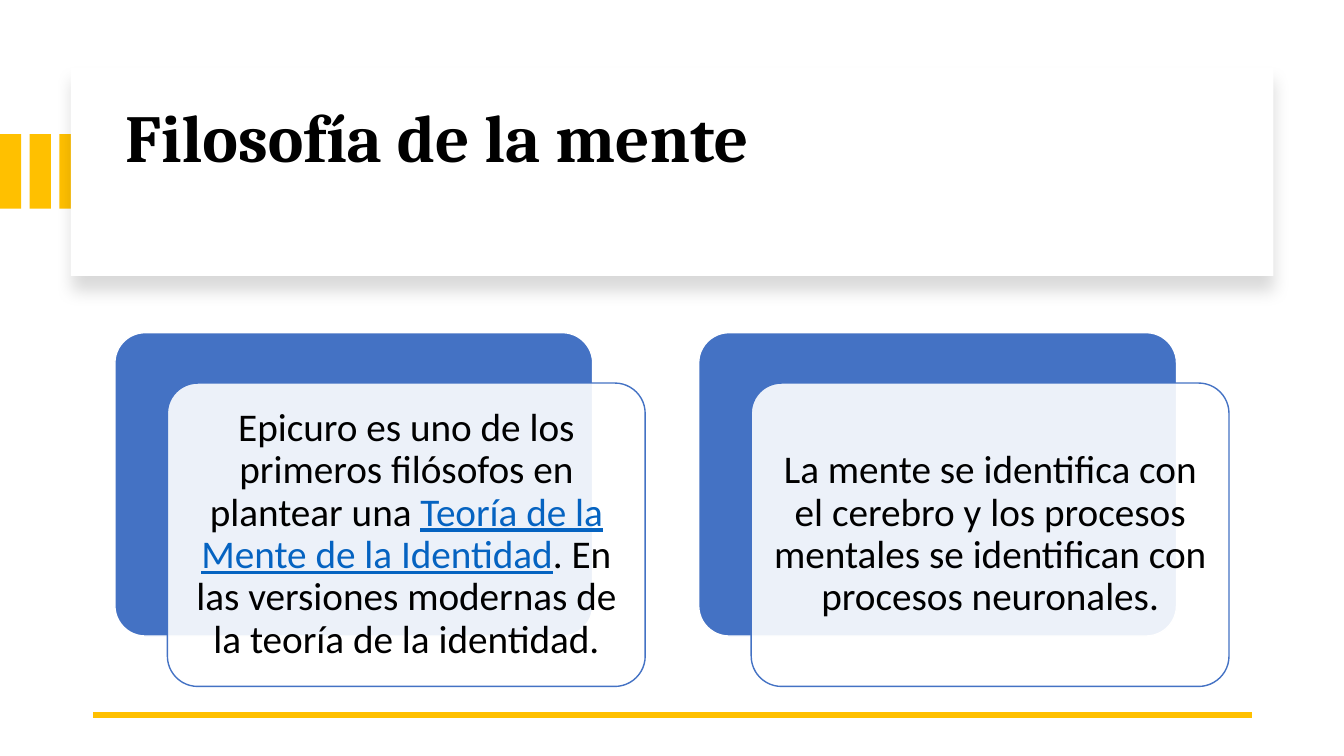
"""Build the slide on philosophy of mind with two layered cards."""
from dataclasses import dataclass
from typing import NamedTuple

from lxml import etree
from pptx import Presentation
from pptx.dml.color import RGBColor
from pptx.enum.shapes import MSO_CONNECTOR, MSO_SHAPE
from pptx.enum.text import MSO_ANCHOR, MSO_AUTO_SIZE, PP_ALIGN
from pptx.oxml.ns import qn
from pptx.shapes.autoshape import Shape
from pptx.slide import Slide
from pptx.text.text import TextFrame
from pptx.util import Pt

RECT = MSO_SHAPE.RECTANGLE
ROUND = MSO_SHAPE.ROUNDED_RECTANGLE
STRAIGHT = MSO_CONNECTOR.STRAIGHT
LEFT, CENTER = PP_ALIGN.LEFT, PP_ALIGN.CENTER
TOP, MIDDLE = MSO_ANCHOR.TOP, MSO_ANCHOR.MIDDLE


@dataclass(frozen=True)
class Theme:
    """Hold the colours, fonts and type sizes."""

    gold: str = "FFC000"
    blue: str = "4472C4"
    white: str = "FFFFFF"
    black: str = "000000"
    link: str = "0563C1"
    head: str = "Cambria"
    body: str = "Calibri"
    big: float = 48
    text: float = 28


class Box(NamedTuple):
    """Hold a frame in points."""

    left: float
    top: float
    width: float
    height: float

    def move(self, right: float, down: float) -> "Box":
        """Return the frame shifted by an offset."""
        return self._replace(left=self.left + right, top=self.top + down)

    def inset(self, gap: float) -> "Box":
        """Return the frame shrunk on every side."""
        return Box(self.left + gap, self.top + gap,
                   self.width - 2 * gap, self.height - 2 * gap)

    def pts(self) -> list[Pt]:
        """Return the frame as lengths."""
        return [Pt(part) for part in self]


class Span(NamedTuple):
    """Hold a stretch of text and whether it is marked as a link."""

    text: str
    link: bool = False


THEME = Theme()
BAR = Box(0, 95.8, 15.1, 53.3)
BAR_STEP = 21.2
BAR_COUNT = 3
PANEL = Box(50.6, 48.2, 859, 149)
TITLE = Box(82.1, 64.1, 801.4, 122.4)
CARD = Box(82.1, 237.6, 341.3, 216.7)
CARD_STEP = 417
FRONT = (37.5, 36)
TEXT_GAP = 6.4
CARDS = (
    (
        Span("Epicuro es uno de los primeros filósofos en plantear una "),
        Span("Teoría de la Mente de la Identidad", True),
        Span(". En las versiones modernas de la teoría de la identidad."),
    ),
    (
        Span("La mente se identifica con el cerebro y los procesos mentales "
             "se identifican con procesos neuronales."),
    ),
)


def write(frame: TextFrame, spans: tuple[Span, ...], *, font: str, size: float,
          bold: bool = False, align: PP_ALIGN = LEFT,
          anchor: MSO_ANCHOR = MIDDLE,
          pads: tuple[float, float] = (8.6, 8.6)) -> None:
    """Fill a text frame with formatted spans, padded at side and top."""
    side, top = pads
    frame.word_wrap = True
    frame.auto_size = MSO_AUTO_SIZE.NONE
    frame.vertical_anchor = anchor
    frame.margin_left = frame.margin_right = Pt(side)
    frame.margin_top = frame.margin_bottom = Pt(top)
    para = frame.paragraphs[0]
    para.alignment = align
    para.line_spacing = 0.9
    for span in spans:
        run = para.add_run()
        run.text = span.text
        run.font.name = font
        run.font.size = Pt(size)
        run.font.bold = bold
        run.font.underline = span.link
        tint = THEME.link if span.link else THEME.black
        run.font.color.rgb = RGBColor.from_string(tint)


def draw(slide: Slide, kind: MSO_SHAPE, box: Box, fill: str,
         line: str | None = None) -> Shape:
    """Add a filled shape with an optional outline."""
    shape = slide.shapes.add_shape(kind, *box.pts())
    shape.shadow.inherit = False
    shape.fill.solid()
    shape.fill.fore_color.rgb = RGBColor.from_string(fill)
    if line:
        shape.line.color.rgb = RGBColor.from_string(line)
        shape.line.width = Pt(1)
    else:
        shape.line.fill.background()
    if kind == ROUND:
        shape.adjustments[0] = 0.1
    return shape


def fade(color: etree._Element, part: int) -> None:
    """Set the opacity of a colour element in percent."""
    etree.SubElement(color, qn("a:alpha"), val=str(part * 1000))


def shade(shape: Shape) -> None:
    """Cast a soft shadow straight down."""
    effects = shape.element.spPr.find(qn("a:effectLst"))
    outer = etree.SubElement(
        effects, qn("a:outerShdw"), blurRad=str(Pt(11)), dist=str(Pt(10)),
        dir="5400000", algn="t", rotWithShape="0")
    fade(etree.SubElement(outer, qn("a:srgbClr"), val=THEME.black), 15)


def header(slide: Slide) -> None:
    """Draw the bars, the panel and the title."""
    for index in range(BAR_COUNT):
        draw(slide, RECT, BAR.move(index * BAR_STEP, 0), THEME.gold)
    shade(draw(slide, RECT, PANEL, THEME.white))
    title = slide.shapes.title
    title.left, title.top, title.width, title.height = TITLE.pts()
    write(title.text_frame, (Span("Filosofía de la mente"),), font=THEME.head,
          size=THEME.big, bold=True, anchor=TOP, pads=(7.2, 10.4))
    title.element.getparent().append(title.element)


def rule(slide: Slide) -> None:
    """Draw the rule along the foot."""
    line = slide.shapes.add_connector(
        STRAIGHT, Pt(894.2), Pt(510.5), Pt(66.2), Pt(510.5))
    line.line.color.rgb = RGBColor.from_string(THEME.gold)
    line.line.width = Pt(4.5)
    etree.SubElement(line.element.spPr, qn("a:effectLst"))


def card(slide: Slide, back: Box, spans: tuple[Span, ...]) -> None:
    """Draw a blue card, its pale front and the text."""
    front = back.move(*FRONT)
    draw(slide, ROUND, back, THEME.blue, THEME.white)
    pale = draw(slide, ROUND, front, THEME.white, THEME.blue)
    fill = pale.element.spPr.find(qn("a:solidFill"))
    fade(fill.find(qn("a:srgbClr")), 90)
    text = slide.shapes.add_textbox(*front.inset(TEXT_GAP).pts())
    write(text.text_frame, spans, font=THEME.body, size=THEME.text,
          align=CENTER)


def main() -> None:
    """Build and save the slide."""
    deck = Presentation()
    deck.slide_width, deck.slide_height = Pt(960), Pt(540)
    slide = deck.slides.add_slide(deck.slide_layouts.get_by_name("Title Only"))
    header(slide)
    rule(slide)
    for index, spans in enumerate(CARDS):
        card(slide, CARD.move(index * CARD_STEP, 0), spans)
    deck.save("out.pptx")


if __name__ == "__main__":
    main()
